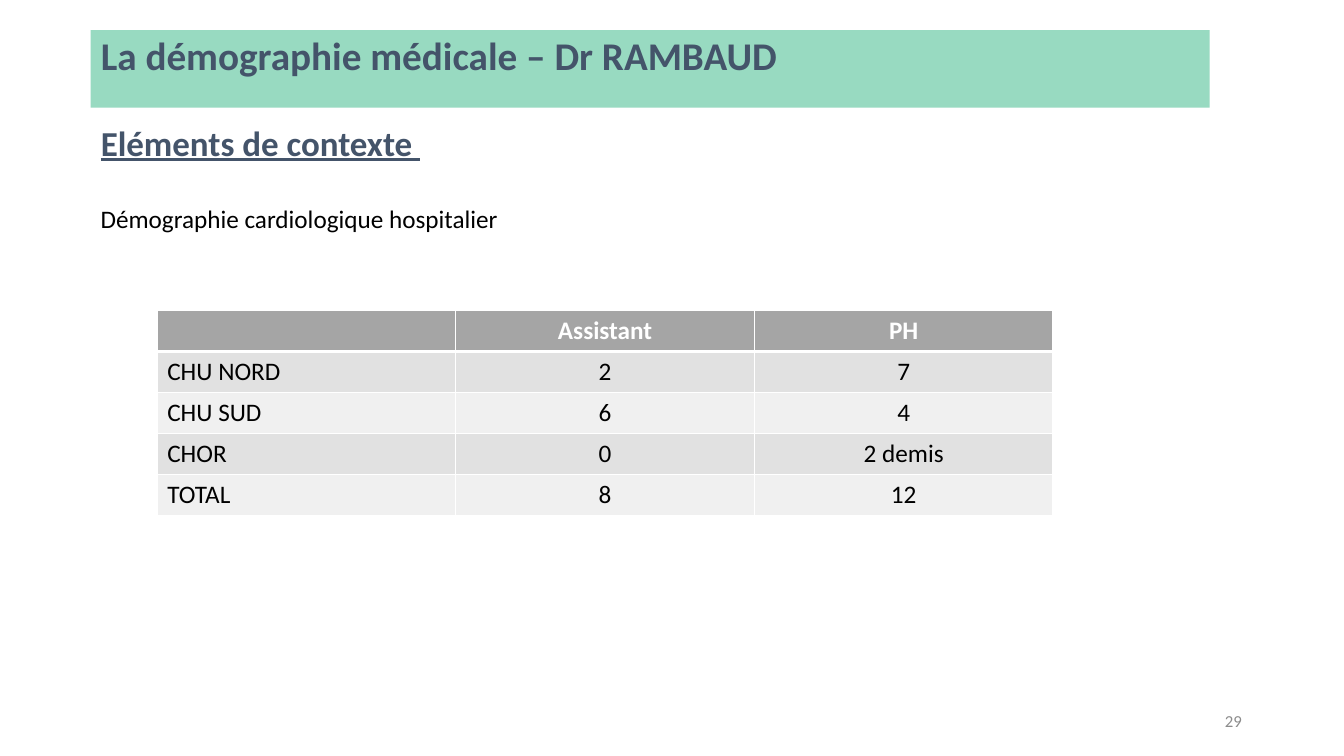
from dataclasses import dataclass

from lxml import etree
from pptx import Presentation
from pptx.dml.color import RGBColor
from pptx.enum.text import MSO_ANCHOR, MSO_AUTO_SIZE, PP_ALIGN
from pptx.oxml.ns import qn
from pptx.util import Pt

LEFT, CENTER, RIGHT = PP_ALIGN.LEFT, PP_ALIGN.CENTER, PP_ALIGN.RIGHT
TOP, MIDDLE = MSO_ANCHOR.TOP, MSO_ANCHOR.MIDDLE
NO_AUTOFIT = MSO_AUTO_SIZE.NONE
TITLE_AND_CONTENT = 1


@dataclass(frozen=True)
class Theme:
    """Hold the colours, font and type sizes of the slide."""
    font: str = "Calibri"
    banner: str = "98DAC1"
    heading: str = "44546A"
    text: str = "000000"
    muted: str = "8C8C8C"
    white: str = "FFFFFF"
    header: str = "A5A5A5"
    bands: tuple = ("E1E1E1", "F0F0F0")
    title_size: float = 28
    heading_size: float = 25
    text_size: float = 18
    number_size: float = 12


THEME = Theme()
STAFF = (
    ("", "Assistant", "PH"),
    ("CHU NORD", "2", "7"),
    ("CHU SUD", "6", "4"),
    ("CHOR", "0", "2 demis"),
    ("TOTAL", "8", "12"),
)
COLUMN_WIDTH, ROW_HEIGHT = 213.3, 29.25


def write(frame, text, size, color, bold=False, align=LEFT):
    """Write one formatted paragraph and return it."""
    line = frame.paragraphs[0]
    line.text = text
    line.alignment = align
    line.font.name = THEME.font
    line.font.size = Pt(size)
    line.font.bold = bold
    line.font.color.rgb = RGBColor.from_string(color)
    return line


def place(holder, left, top, width, height):
    """Move a placeholder and return its text frame, anchored at the top."""
    holder.left, holder.top = Pt(left), Pt(top)
    holder.width, holder.height = Pt(width), Pt(height)
    frame = holder.text_frame
    frame.auto_size = NO_AUTOFIT
    frame.vertical_anchor = TOP
    return frame


def add_banner(title):
    """Fill in the title on its green band."""
    frame = place(title, 64.8, 21.6, 799.2, 55.4)
    title.fill.solid()
    title.fill.fore_color.rgb = RGBColor.from_string(THEME.banner)
    line = write(frame, "La démographie médicale – Dr RAMBAUD",
                 THEME.title_size, THEME.heading, bold=True)
    line.line_spacing = 0.93


def add_heading(body):
    """Fill in the underlined heading without a bullet."""
    frame = place(body, 64.8, 86.4, 829.4, 385.2)
    line = write(frame, "Eléments de contexte ",
                 THEME.heading_size, THEME.heading, bold=True)
    line.font.underline = True
    line.line_spacing = 0.9
    line.space_before = Pt(0)
    properties = line._p.get_or_add_pPr()
    properties.set("marL", "0")
    properties.set("indent", "0")
    etree.SubElement(properties, qn("a:buNone"))


def add_text(slide, text, box, size, color, align=LEFT, anchor=TOP):
    """Add a wrapping text box."""
    frame = slide.shapes.add_textbox(*map(Pt, box)).text_frame
    frame.word_wrap = True
    frame.vertical_anchor = anchor
    write(frame, text, size, color, align=align)


def set_borders(cell, top, bottom):
    """Draw white cell borders, with the given widths above and below."""
    properties = cell._tc.get_or_add_tcPr()
    for side, width in (("L", 1), ("R", 1), ("T", top), ("B", bottom)):
        border = etree.SubElement(properties, qn(f"a:ln{side}"), w=str(Pt(width)))
        fill = etree.SubElement(border, qn("a:solidFill"))
        etree.SubElement(fill, qn("a:srgbClr"), val=THEME.white)


def add_staff_table(slide):
    """Add the table of hospital staff with banded rows."""
    column_count = len(STAFF[0])
    table = slide.shapes.add_table(
        len(STAFF), column_count, Pt(112.3), Pt(221.8),
        Pt(COLUMN_WIDTH * column_count), Pt(ROW_HEIGHT * len(STAFF))).table
    for row, values in enumerate(STAFF):
        is_header = row == 0
        background = THEME.header if is_header else THEME.bands[(row - 1) % 2]
        for column, value in enumerate(values):
            cell = table.cell(row, column)
            set_borders(cell, 3 if row == 1 else 1, 3 if is_header else 1)
            cell.fill.solid()
            cell.fill.fore_color.rgb = RGBColor.from_string(background)
            write(cell.text_frame, value, THEME.text_size,
                  THEME.white if is_header else THEME.text,
                  bold=is_header, align=CENTER if column else LEFT)


def main():
    """Build and save the slide."""
    deck = Presentation()
    deck.slide_width, deck.slide_height = Pt(960), Pt(540)
    slide = deck.slides.add_slide(deck.slide_layouts[TITLE_AND_CONTENT])
    add_banner(slide.shapes.title)
    add_heading(slide.placeholders[1])
    add_text(slide, "Démographie cardiologique hospitalier",
             (64.8, 142, 799.2, 51), THEME.text_size, THEME.text)
    add_staff_table(slide)
    add_text(slide, "29", (678.2, 500.5, 216, 28.8), THEME.number_size,
             THEME.muted, align=RIGHT, anchor=MIDDLE)
    deck.save("out.pptx")


if __name__ == "__main__":
    main()
